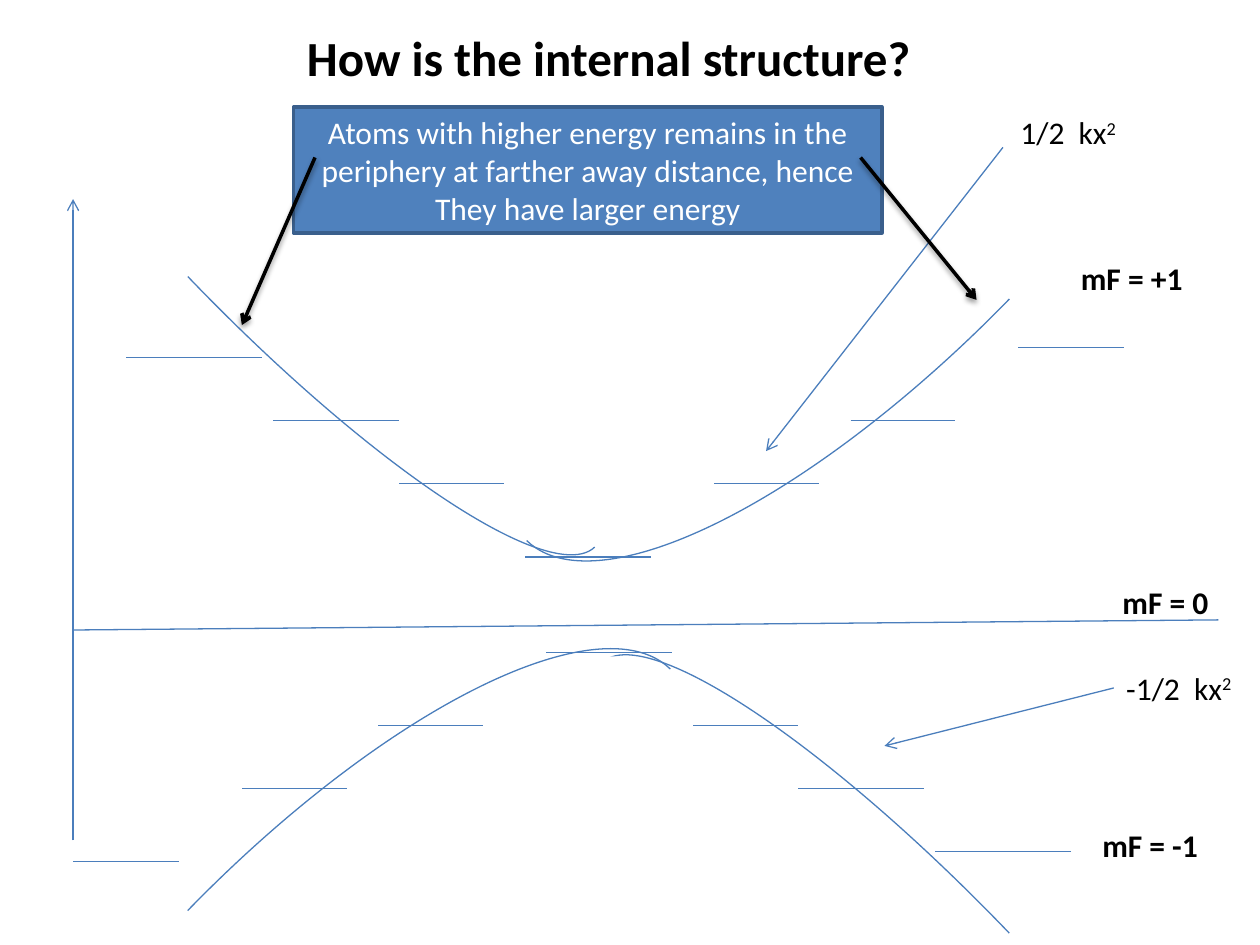
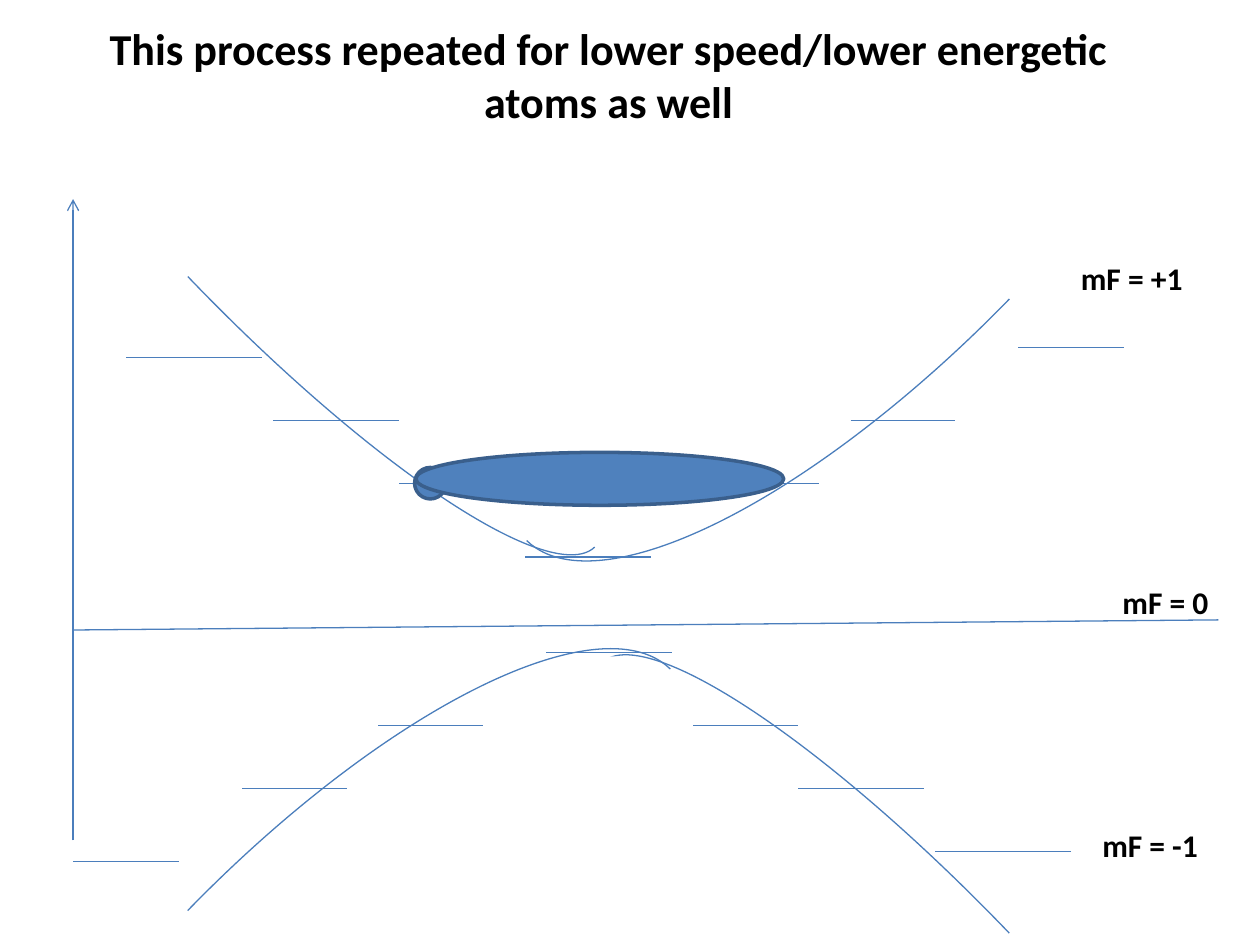
from lxml.etree import SubElement
from pptx import Presentation
from pptx.dml.color import RGBColor
from pptx.enum.shapes import MSO_CONNECTOR, MSO_SHAPE
from pptx.enum.text import MSO_ANCHOR, MSO_AUTO_SIZE, PP_ALIGN
from pptx.oxml.ns import qn
from pptx.util import Inches, Pt

FONT = "Calibri"
BLACK = RGBColor(0x00, 0x00, 0x00)
WHITE = RGBColor(0xFF, 0xFF, 0xFF)
LINE_BLUE = RGBColor(0x4B, 0x7E, 0xBC)
FILL_BLUE = RGBColor(0x4F, 0x81, 0xBD)
EDGE_BLUE = RGBColor(0x3A, 0x5F, 0x8C)

# Potential curve, relative to the point the two curves mirror through
LEVELS = [  # start x, end x, y
    (-3.75, -2.67, -1.96), (-2.58, -1.58, -1.46), (-1.58, -0.75, -0.96),
    (-0.58, 0.42, -0.38), (0.92, 1.75, -0.96), (2.0, 2.83, -1.46),
    (3.33, 4.17, -2.04),
]
ARCS = [  # centre x, centre y, width, height, rotation, mirrored
    (2.25, -3.41, 8.09, 2.82, 134.2, False),
    (-2.65, -3.19, 7.57, 1.69, 226.2, True),
]


def write(tf, *paragraphs, size=18, color=BLACK, bold=False, align=None, sup=None):
    """Fill a text frame; sup is a superscript after the last paragraph."""
    for i, text in enumerate(paragraphs):
        p = tf.paragraphs[0] if i == 0 else tf.add_paragraph()
        p.alignment = align
        parts = [text, sup] if sup and i == len(paragraphs) - 1 else [text]
        for part in parts:
            r = p.add_run()
            r.text = part
            r.font.name, r.font.size = FONT, Pt(size)
            r.font.bold, r.font.color.rgb = bold, color
            if part is sup:
                r.font._element.set("baseline", "30000")


def label(shapes, text, x, y, w, **fmt):
    tf = shapes.add_textbox(Inches(x), Inches(y), Inches(w), Inches(0.4)).text_frame
    tf.word_wrap = False
    tf.auto_size = MSO_AUTO_SIZE.SHAPE_TO_FIT_TEXT
    write(tf, text, **fmt)


def line(shapes, x1, y1, x2, y2, color=LINE_BLUE, width=0.75, arrow=False, shadow=False):
    c = shapes.add_connector(MSO_CONNECTOR.STRAIGHT, *map(Inches, (x1, y1, x2, y2)))
    c.line.color.rgb, c.line.width = color, Pt(width)
    if arrow:
        SubElement(c.line._get_or_add_ln(), qn("a:tailEnd"), type="arrow")
    effects = SubElement(c._element.spPr, qn("a:effectLst"))
    if shadow:
        outer = SubElement(effects, qn("a:outerShdw"), blurRad=str(Pt(3.1)),
                           dist=str(Pt(1.6)), dir="5400000", rotWithShape="0")
        tint = SubElement(outer, qn("a:srgbClr"), val=str(BLACK))
        SubElement(tint, qn("a:alpha"), val="38000")


def shape(shapes, kind, x, y, w, h, fill=None, edge=None, width=2):
    sp = shapes.add_shape(kind, *map(Inches, (x, y, w, h)))
    sp.shadow.inherit = False
    if fill is None:
        sp.fill.background()
    else:
        sp.fill.solid()
        sp.fill.fore_color.rgb = fill
    if edge is None:
        sp.line.fill.background()
    else:
        sp.line.color.rgb, sp.line.width = edge, Pt(width)
    return sp


def title(s, text, x, y, size, anchor=MSO_ANCHOR.MIDDLE):
    tf = s.shapes.add_textbox(Inches(x), Inches(y), Inches(9), Inches(1.25)).text_frame
    tf.word_wrap = True
    tf.vertical_anchor = anchor
    if anchor == MSO_ANCHOR.TOP:
        tf.margin_top = 0
    write(tf, text, size=size, bold=True, align=PP_ALIGN.CENTER)


def potential(s, cx, cy, sign):
    """Levels and curve; sign -1 turns them half way round (cx, cy)."""
    shapes = s.shapes.add_group_shape().shapes
    for x1, x2, y in LEVELS:
        line(shapes, cx + sign * x1, cy + sign * y, cx + sign * x2, cy + sign * y)
    for ax, ay, w, h, angle, mirrored in ARCS:
        sp = shape(shapes, MSO_SHAPE.ARC, cx + sign * ax - w / 2, cy + sign * ay - h / 2,
                   w, h, edge=LINE_BLUE, width=0.75)
        sp.rotation = (angle + (180 if sign < 0 else 0)) % 360
        if mirrored:
            sp._element.spPr.find(qn("a:xfrm")).set("flipH", "1")


def energy_diagram(s, x, y):
    """Axes, both curves and state labels; (x, y) is the top of the energy axis."""
    line(s.shapes, x, y + 5.09, x, y, arrow=True)
    line(s.shapes, x, y + 3.42, x + 9.09, y + 3.34)
    for sign in (1, -1):
        potential(s, x + 4.17, y + 3.22, sign)
    for text, dx, dy, w in [("mF = +1", 7.9, 0.43, 1.02), ("mF = -1", 8.07, 4.93, 0.97),
                            ("mF = 0", 8.23, 3.0, 0.89)]:
        label(s.shapes, text, x + dx, y + dy, w, bold=True)
    # White patch over the loose end of the lower curve
    shape(s.shapes, MSO_SHAPE.RECTANGLE, x + 4, y + 3.63, 0.42, 0.21, fill=WHITE)


def curve_formulas(s):
    line(s.shapes, 7.96, 1.17, 6.08, 3.58, arrow=True)
    label(s.shapes, "1/2  kx", 8, 0.85, 0.98, sup="2")
    label(s.shapes, "-1/2  kx", 8.84, 5.26, 1.06, sup="2")
    line(s.shapes, 8.84, 5.46, 7.02, 5.92, arrow=True)


def callout(s, x, y):
    sp = shape(s.shapes, MSO_SHAPE.RECTANGLE, x, y, 4.67, 1, fill=FILL_BLUE, edge=EDGE_BLUE)
    tf = sp.text_frame
    tf.word_wrap = True
    tf.vertical_anchor = MSO_ANCHOR.MIDDLE
    write(tf, "Atoms with higher energy remains in the periphery at farther away distance, hence",
          "They have larger energy", color=WHITE, align=PP_ALIGN.CENTER)
    # Arrows to both rims of the upper curve
    for x1, x2, y2 in [(0.17, -0.41, 1.73), (4.5, 5.42, 1.53)]:
        line(s.shapes, x + x1, y + 0.4, x + x2, y + y2, color=BLACK, width=2,
             arrow=True, shadow=True)


def atom_cloud(s, x, y):
    for dx, dy, w, h in [(0, 0.12, 0.25, 0.25), (0.01, 0, 2.92, 0.42)]:
        shape(s.shapes, MSO_SHAPE.OVAL, x + dx, y + dy, w, h, fill=FILL_BLUE, edge=EDGE_BLUE)


def main():
    prs = Presentation()
    prs.slide_width, prs.slide_height = Inches(10), Inches(7.5)
    blank = prs.slide_layouts[6]

    # Internal structure
    s = prs.slides.add_slide(blank)
    title(s, "How is the internal structure?", 0.33, -0.17, 28)
    energy_diagram(s, 0.58, 1.58)
    curve_formulas(s)
    callout(s, 2.33, 0.85)

    # Lower energy atoms
    s = prs.slides.add_slide(blank)
    title(s, "This process repeated for lower speed/lower energetic atoms as well",
          0.33, 0.17, 25.2, MSO_ANCHOR.TOP)
    energy_diagram(s, 0.58, 1.58)
    atom_cloud(s, 3.29, 3.59)

    prs.save("out.pptx")


if __name__ == "__main__":
    main()
